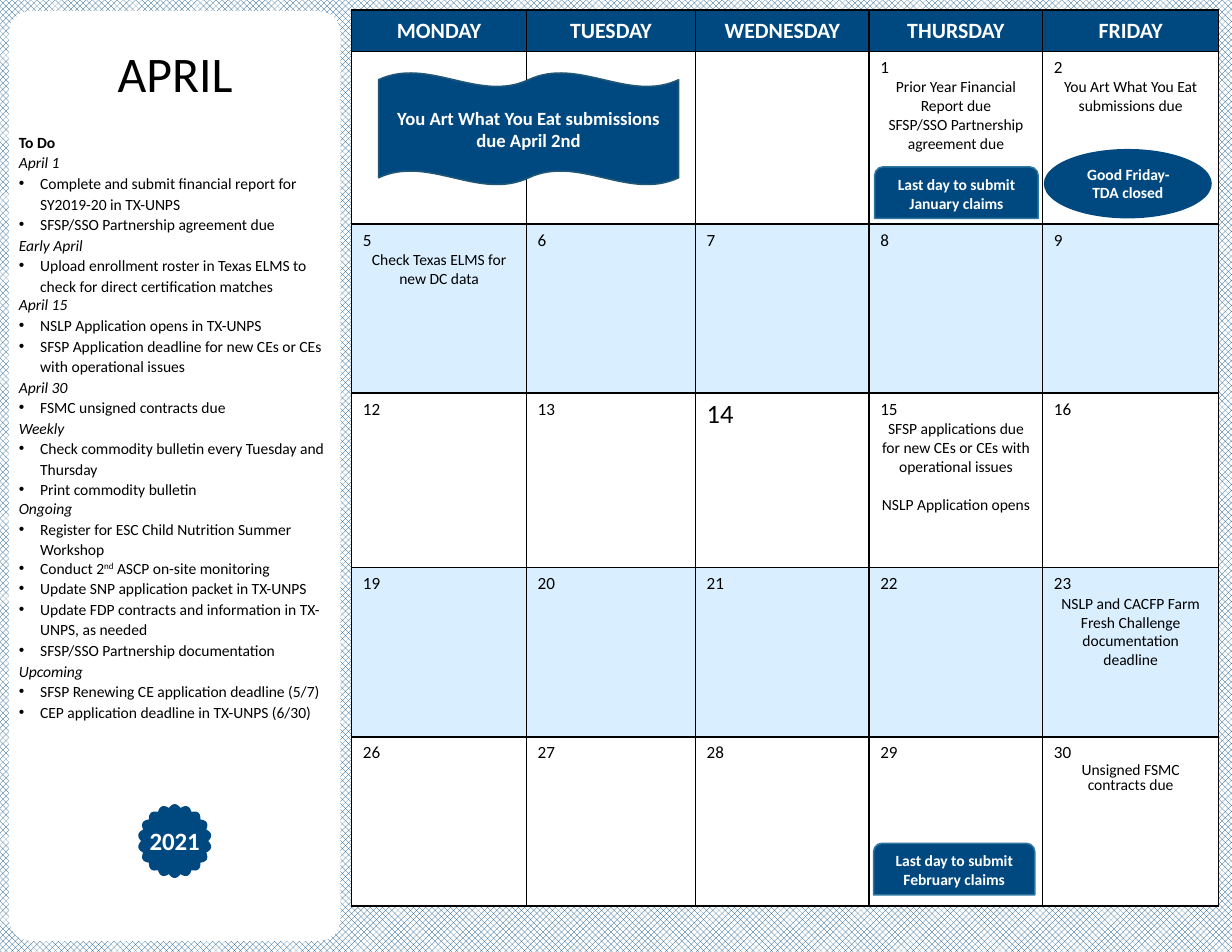
from math import cos, pi, sin

from lxml import etree
from pptx import Presentation
from pptx.dml.color import RGBColor
from pptx.enum.dml import MSO_PATTERN
from pptx.enum.shapes import MSO_SHAPE
from pptx.enum.text import MSO_ANCHOR, MSO_AUTO_SIZE, PP_ALIGN
from pptx.oxml.ns import qn
from pptx.util import Inches, Pt

CENTER, LEFT = PP_ALIGN.CENTER, PP_ALIGN.LEFT
TOP, MIDDLE = MSO_ANCHOR.TOP, MSO_ANCHOR.MIDDLE
GROW, FIXED = MSO_AUTO_SIZE.SHAPE_TO_FIT_TEXT, MSO_AUTO_SIZE.NONE
ROUNDED, ELLIPSE = MSO_SHAPE.ROUNDED_RECTANGLE, MSO_SHAPE.OVAL
TAB, WAVE = MSO_SHAPE.ROUND_2_SAME_RECTANGLE, MSO_SHAPE.DOUBLE_WAVE
DIAMONDS = MSO_PATTERN.SOLID_DIAMOND

THEME = {
    "font": "Calibri",
    "navy": "004980", "pale": "D9EFFF", "white": "FFFFFF", "black": "000000",
    "tab_edge": "2D769F", "wave_edge": "215776",
    "title": 32, "year": 16, "weekday": 14, "banner": 12, "day": 11, "body": 10,
    "large_day": 17,
}

MONTH, YEAR = "APRIL", "2021"
WEEKDAYS = ["MONDAY", "TUESDAY", "WEDNESDAY", "THURSDAY", "FRIDAY"]
COLUMN_WIDTHS = [1.56, 1.51, 1.55, 1.55, 1.57]
ROW_HEIGHTS = [0.37, 1.54, 1.51, 1.56, 1.51, 1.51]
FIRST_DAY_COLUMN = 3
LAST_DAY = 30
LARGE_DAYS = [14]
EVENTS = {
    1: ["Prior Year Financial Report due", "SFSP/SSO Partnership agreement due"],
    2: ["You Art What You Eat submissions due"],
    5: ["Check Texas ELMS for new DC data"],
    15: ["SFSP applications due for new CEs or CEs with operational issues",
         "NSLP Application opens"],
    23: ["NSLP and CACFP Farm Fresh Challenge documentation deadline"],
    30: ["Unsigned FSMC contracts due"],
}
GAP_BEFORE_LAST_EVENT = {15: 12.2}
TIGHT_EVENTS = {30: 10}

TO_DO = [
    ("April 1", ["Complete and submit financial report for SY2019-20 in TX-UNPS",
                 "SFSP/SSO Partnership agreement due"]),
    ("Early April", ["Upload enrollment roster in Texas ELMS to check for direct "
                     "certification matches"]),
    ("April 15", ["NSLP Application opens in TX-UNPS",
                  "SFSP Application deadline for new CEs or CEs with operational issues"]),
    ("April 30", ["FSMC unsigned contracts due"]),
    ("Weekly", ["Check commodity bulletin every Tuesday and Thursday",
                "Print commodity bulletin"]),
    ("Ongoing", ["Register for ESC Child Nutrition Summer Workshop",
                 ("Conduct 2", "nd", " ASCP on-site monitoring"),
                 "Update SNP application packet in TX-UNPS",
                 "Update FDP contracts and information in TX-UNPS, as needed",
                 "SFSP/SSO Partnership documentation"]),
    ("Upcoming", ["SFSP Renewing CE application deadline (5/7)",
                  "CEP application deadline in TX-UNPS (6/30)"]),
]
SINGLE_SPACED = ["April 15", "Ongoing", ("Conduct 2", "nd", " ASCP on-site monitoring")]

CALLOUTS = [
    (ELLIPSE, (9.32, 1.33, 1.5, 0.62), None, "body", TOP, GROW, "Good Friday-TDA closed"),
    (TAB, (7.8, 7.53, 1.44, 0.46), "tab_edge", "body", TOP, GROW,
     "Last day to submit February claims"),
    (TAB, (7.81, 1.49, 1.46, 0.46), "tab_edge", "body", TOP, GROW,
     "Last day to submit January claims"),
    (WAVE, (3.38, 0.65, 2.68, 1), "wave_edge", "banner", MIDDLE, FIXED,
     "You Art What You Eat submissions due April 2nd"),
]


def color(name):
    return RGBColor.from_string(THEME[name])


def add_span(para, text, size, ink="black", bold=False, italic=False):
    span = para.add_run()
    span.text = text
    font = span.font
    font.name, font.size = THEME["font"], Pt(THEME[size])
    font.bold, font.italic = bold, italic
    font.color.rgb = color(ink)
    return span


def next_para(frame, align=LEFT):
    first = frame.paragraphs[0]
    para = frame.add_paragraph() if first.runs else first
    para.alignment = align
    return para


def paint(shape, fill, line=None):
    shape.shadow.inherit = False
    shape.fill.solid()
    shape.fill.fore_color.rgb = color(fill)
    if line:
        shape.line.color.rgb = color(line)
        shape.line.width = Pt(1)
    else:
        shape.line.fill.background()


def add_text_box(slide, place):
    frame = slide.shapes.add_textbox(*map(Inches, place)).text_frame
    frame.word_wrap = True
    frame.auto_size = GROW
    return frame


def style_cell(cell, fill):
    properties = cell._tc.get_or_add_tcPr()
    for side in ("a:lnL", "a:lnR", "a:lnT", "a:lnB"):
        line = etree.SubElement(properties, qn(side), w=str(Pt(1)))
        solid = etree.SubElement(line, qn("a:solidFill"))
        etree.SubElement(solid, qn("a:srgbClr"), val=THEME["black"])
    cell.fill.solid()
    cell.fill.fore_color.rgb = color(fill)


def add_calendar(slide):
    frame = slide.shapes.add_table(
        len(ROW_HEIGHTS), len(WEEKDAYS), Inches(3.14), Inches(0.09),
        Inches(sum(COLUMN_WIDTHS)), Inches(sum(ROW_HEIGHTS)))
    table = frame.table
    table.first_row = table.horz_banding = False
    for column, width in zip(table.columns, COLUMN_WIDTHS):
        column.width = Inches(width)
    for row, height in zip(table.rows, ROW_HEIGHTS):
        row.height = Inches(height)
    for column, weekday in enumerate(WEEKDAYS):
        cell = table.cell(0, column)
        style_cell(cell, "navy")
        cell.vertical_anchor = MIDDLE
        add_span(next_para(cell.text_frame, CENTER), weekday, "weekday", "white", True)
    for week in range(1, len(ROW_HEIGHTS)):
        for column in range(len(WEEKDAYS)):
            cell = table.cell(week, column)
            style_cell(cell, "white" if week % 2 else "pale")
            day = 7 * (week - 1) + column - FIRST_DAY_COLUMN + 1
            if 1 <= day <= LAST_DAY:
                fill_day(cell.text_frame, day)


def fill_day(frame, day):
    size = "large_day" if day in LARGE_DAYS else "day"
    add_span(next_para(frame), str(day), size)
    for event in EVENTS.get(day, []):
        para = next_para(frame, CENTER)
        add_span(para, event, "body")
        if day in TIGHT_EVENTS:
            para.line_spacing = Pt(TIGHT_EVENTS[day])
    if day in GAP_BEFORE_LAST_EVENT:
        para.space_before = Pt(GAP_BEFORE_LAST_EVENT[day])


def add_to_do(slide):
    frame = add_text_box(slide, (0.07, 1.12, 2.98, 5.99))
    heading = next_para(frame)
    heading.line_spacing = 1.1
    add_span(heading, "To Do", "body", bold=True)
    for period, tasks in TO_DO:
        para = next_para(frame)
        para.line_spacing = 1.0 if period in SINGLE_SPACED else 1.1
        add_span(para, period, "body", italic=True)
        for task in tasks:
            para = next_para(frame)
            para.line_spacing = 1.0 if task in SINGLE_SPACED else 1.1
            properties = para._p.get_or_add_pPr()
            properties.set("marL", str(Inches(0.19)))
            properties.set("indent", str(-Inches(0.19)))
            etree.SubElement(properties, qn("a:buFont"), typeface="Arial")
            etree.SubElement(properties, qn("a:buChar"), char="•")
            for text in [task] if isinstance(task, str) else task:
                span = add_span(para, text, "body")
                if text == "nd":
                    span._r.get_or_add_rPr().set("baseline", "30000")


def add_year_badge(slide):
    lobes, steps = 18, 144
    points = []
    for step in range(steps):
        angle = 2 * pi * step / steps
        radius = 0.3 + 0.03 * abs(sin(lobes * angle / 2))
        points.append((Inches(1.56 + radius * cos(angle)), Inches(7.51 + radius * sin(angle))))
    builder = slide.shapes.build_freeform(*points[0])
    builder.add_line_segments(points[1:], close=True)
    paint(builder.convert_to_shape(), "navy")
    frame = add_text_box(slide, (1.18, 7.32, 0.76, 0.37))
    add_span(next_para(frame, CENTER), YEAR, "year", "white", True)


def add_callout(slide, kind, place, line, size, anchor, fit, text):
    shape = slide.shapes.add_shape(kind, *map(Inches, place))
    paint(shape, "navy", line)
    frame = shape.text_frame
    frame.word_wrap = True
    frame.auto_size, frame.vertical_anchor = fit, anchor
    add_span(next_para(frame, CENTER), text, size, "white", True)


def main():
    deck = Presentation()
    deck.slide_width, deck.slide_height = Inches(11), Inches(8.5)
    slide = deck.slides.add_slide(deck.slide_layouts[6])
    backdrop = slide.background.fill
    backdrop.patterned()
    backdrop.pattern = DIAMONDS
    backdrop.fore_color.rgb, backdrop.back_color.rgb = color("navy"), color("white")

    panel = slide.shapes.add_shape(ROUNDED, *map(Inches, (0.08, 0.1, 2.96, 8.3)))
    panel.adjustments[0] = 0.065
    paint(panel, "white")
    add_calendar(slide)
    add_to_do(slide)
    title = add_text_box(slide, (0.08, 0.34, 2.97, 0.62))
    title.margin_left = title.margin_right = Inches(0.08)
    title.margin_top = title.margin_bottom = Inches(0.04)
    add_span(next_para(title, CENTER), MONTH, "title")
    add_year_badge(slide)
    for callout in CALLOUTS:
        add_callout(slide, *callout)
    deck.save("out.pptx")


if __name__ == "__main__":
    main()
